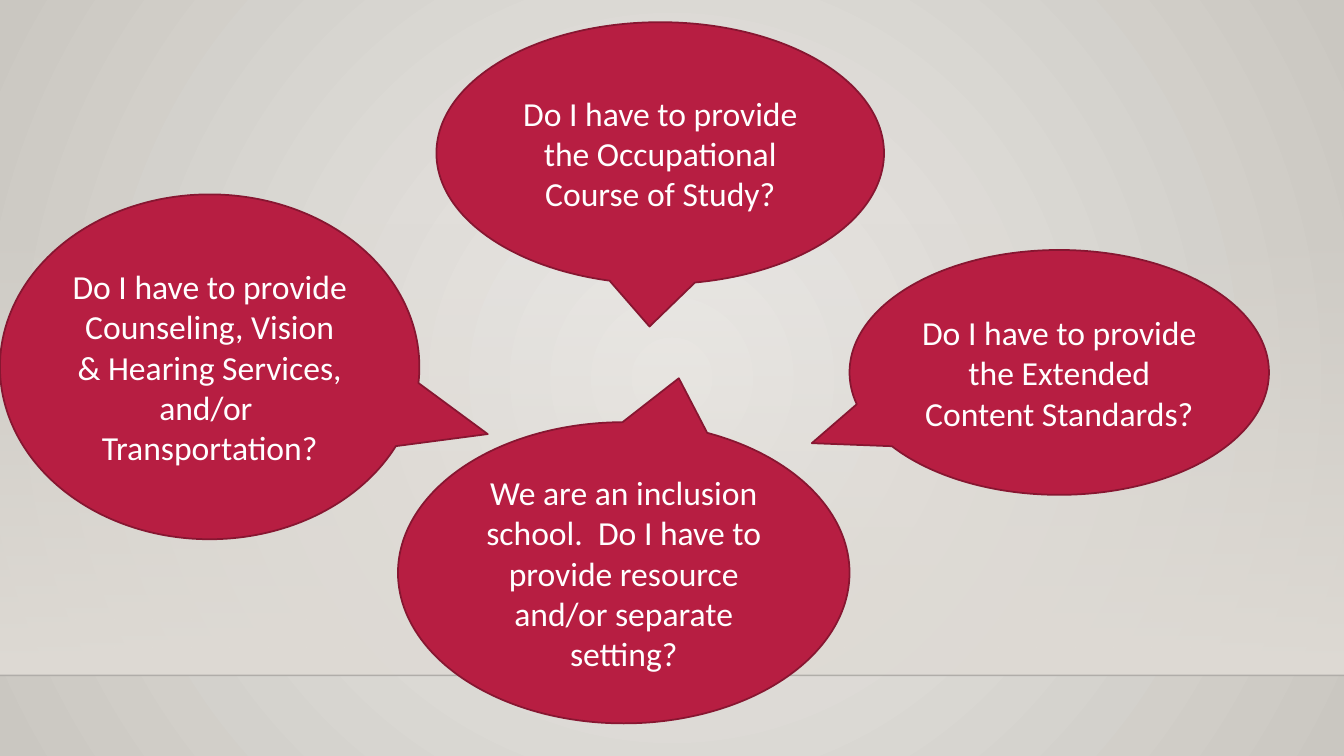
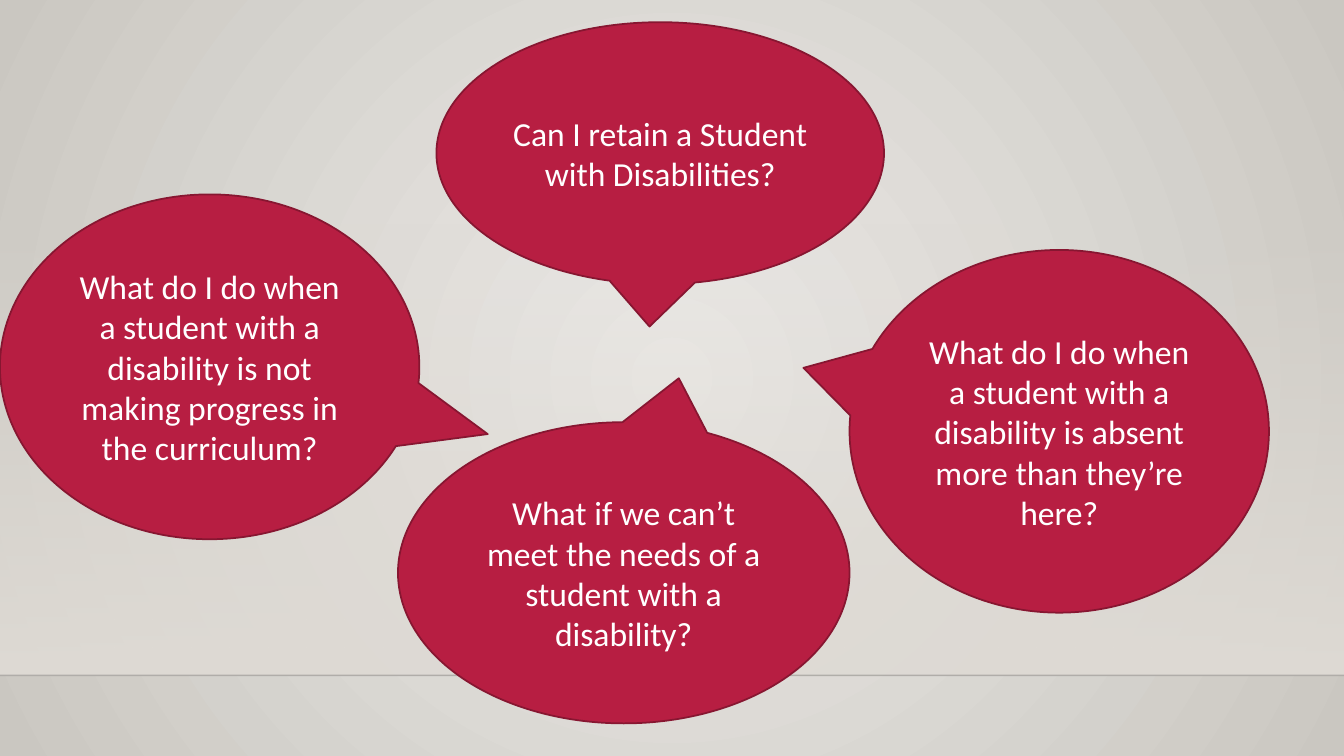
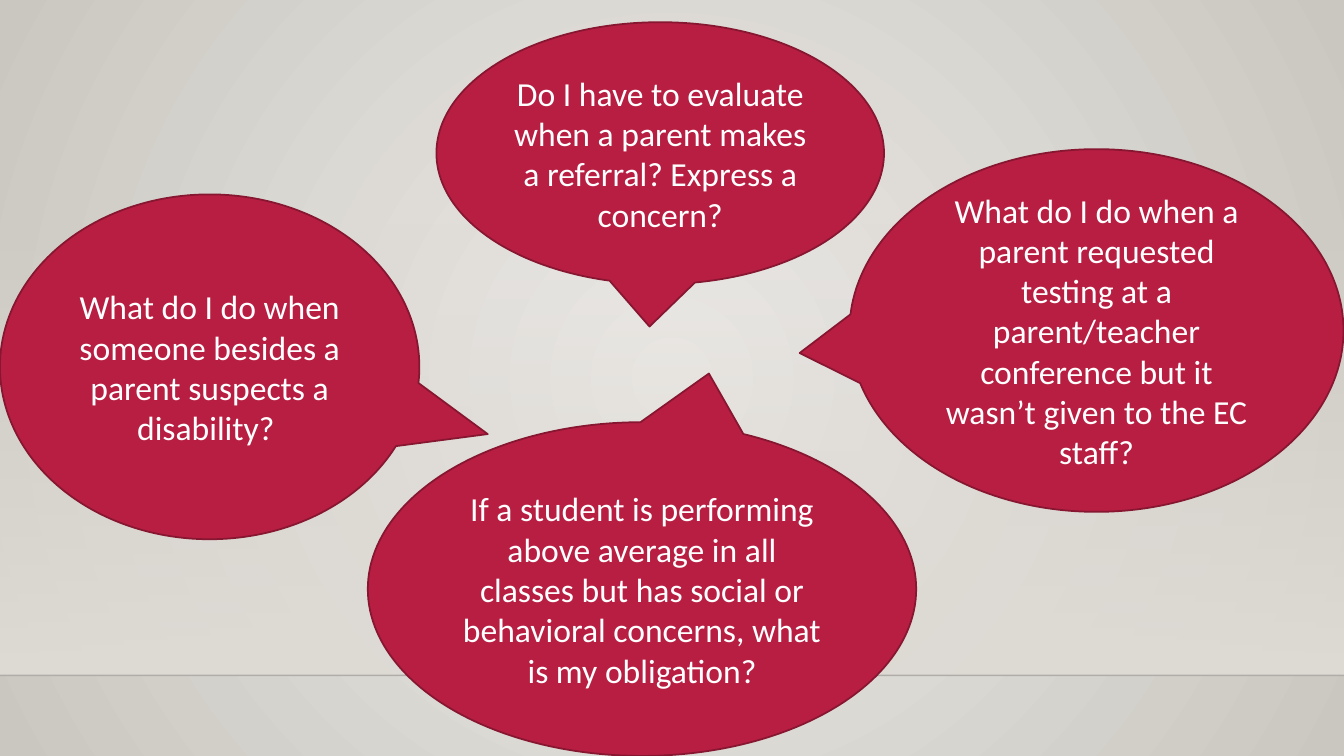
from lxml import etree
from pptx import Presentation
from pptx.dml.color import RGBColor
from pptx.enum.shapes import MSO_CONNECTOR, MSO_SHAPE
from pptx.enum.text import MSO_ANCHOR, PP_ALIGN
from pptx.oxml.ns import qn
from pptx.util import Cm, Pt

CALLOUT = MSO_SHAPE.OVAL_CALLOUT
RECTANGLE = MSO_SHAPE.RECTANGLE
STRAIGHT = MSO_CONNECTOR.STRAIGHT
MIDDLE = MSO_ANCHOR.MIDDLE
CENTER = PP_ALIGN.CENTER

WIDTH, HEIGHT = Cm(33.87), Cm(19.05)
BAND_TOP, FLOOR = Cm(5.61), Cm(17.02)
FONT = "Calibri"
CRIMSON, DARK_CRIMSON, WHITE = "B71E42", "871631", "FFFFFF"
GLOW, EDGE, BAND, FLOOR_LINE = "ECEAE7", "CAC7C1", "DFDBD5", "000001"

LEFT = ((0, 4.9, 10.57, 8.69), (0.663, 0.195))
BOTTOM = ((10.03, 10.64, 11.38, 7.59), (0.122, -0.646))
WIDE_BOTTOM = ((9.27, 10.64, 13.82, 8.41), (0.122, -0.646))
TOP = ((11, 0.56, 11.28, 6.6), (-0.024, 0.662))
SHORT_RIGHT = ((21.41, 6.3, 10.57, 6.17), (-0.59, 0.289))
TALL_RIGHT = ((21.41, 6.3, 10.57, 9.14), (-0.61, -0.175))
WIDE_RIGHT = ((21.41, 3.76, 12.45, 9.14), (-0.601, 0.062))

SLIDES = [
    [
        (LEFT, "Do I have to provide Counseling, Vision & Hearing Services, and/or  Transportation?"),
        (BOTTOM, "We are an inclusion school.  Do I have to provide resource and/or separate setting?"),
        (TOP, "Do I have to provide the Occupational Course of Study?"),
        (SHORT_RIGHT, "Do I have to provide the Extended Content Standards?"),
    ],
    [
        (LEFT, "What do I do when a student with a disability is not making progress in the curriculum?"),
        (BOTTOM, "What if we can’t meet the needs of a student with a disability?"),
        (TOP, "Can I retain a Student with Disabilities?"),
        (TALL_RIGHT, "What do I do when a student with a disability is absent more than they’re here?"),
    ],
    [
        (LEFT, "What do I do when someone besides a parent suspects a disability? "),
        (WIDE_BOTTOM, "If a student is performing above average in all classes but has social or "
                      "behavioral concerns, what is my obligation?"),
        (TOP, "Do I have to evaluate when a parent makes a referral? Express a concern?"),
        (WIDE_RIGHT, "What do I do when a parent requested testing at a parent/teacher conference "
                     "but it wasn’t given to the EC staff?"),
    ],
]


def color(value):
    return RGBColor.from_string(value)


def set_gradient(fill, *values):
    fill.gradient()
    for stop, value in zip(fill.gradient_stops, values):
        stop.color.rgb = color(value)


def set_first_alpha(element, percent):
    first = next(element.iter(qn("a:srgbClr")))
    etree.SubElement(first, qn("a:alpha")).set("val", str(percent * 1000))


def style_background(master):
    set_gradient(master.background.fill, GLOW, EDGE)
    gradient = next(master.element.iter(qn("a:gradFill")))
    linear = gradient.find(qn("a:lin"))
    radial = etree.Element(qn("a:path"), {"path": "circle"})
    etree.SubElement(radial, qn("a:fillToRect"), {side: "50000" for side in "ltrb"})
    gradient.replace(linear, radial)


def move_wall_to_master(slide, master):
    band = slide.shapes.add_shape(RECTANGLE, 0, BAND_TOP, WIDTH, FLOOR - BAND_TOP)
    band.shadow.inherit = False
    band.line.fill.background()
    set_gradient(band.fill, BAND, BAND)
    band.fill.gradient_angle = 270
    set_first_alpha(band.element, 0)

    line = slide.shapes.add_connector(STRAIGHT, 0, FLOOR, WIDTH, FLOOR)
    line.line.color.rgb = color(FLOOR_LINE)
    line.line.width = Pt(1)
    set_first_alpha(line.element, 20)
    etree.SubElement(line.element.spPr, qn("a:effectLst"))

    tree = master.element.cSld.spTree
    for index, shape in enumerate((band, line), start=2):
        tree.insert(index, shape.element)


def add_callout(slide, place, question):
    box, tip = place
    callout = slide.shapes.add_shape(CALLOUT, *map(Cm, box))
    callout.adjustments[0], callout.adjustments[1] = tip
    callout.shadow.inherit = False
    callout.fill.solid()
    callout.fill.fore_color.rgb = color(CRIMSON)
    callout.line.color.rgb = color(DARK_CRIMSON)
    callout.line.width = Pt(1.25)
    frame = callout.text_frame
    frame.word_wrap = True
    frame.vertical_anchor = MIDDLE
    frame.text = question
    paragraph = frame.paragraphs[0]
    paragraph.alignment = CENTER
    paragraph.font.name = FONT
    paragraph.font.size = Pt(24)
    paragraph.font.color.rgb = color(WHITE)


def main():
    presentation = Presentation()
    presentation.slide_width, presentation.slide_height = WIDTH, HEIGHT
    master = presentation.slide_master
    blank = presentation.slide_layouts[6]
    style_background(master)
    slides = [presentation.slides.add_slide(blank) for _ in SLIDES]
    move_wall_to_master(slides[0], master)
    for slide, callouts in zip(slides, SLIDES):
        for place, question in callouts:
            add_callout(slide, place, question)
    presentation.save("out.pptx")


if __name__ == "__main__":
    main()
